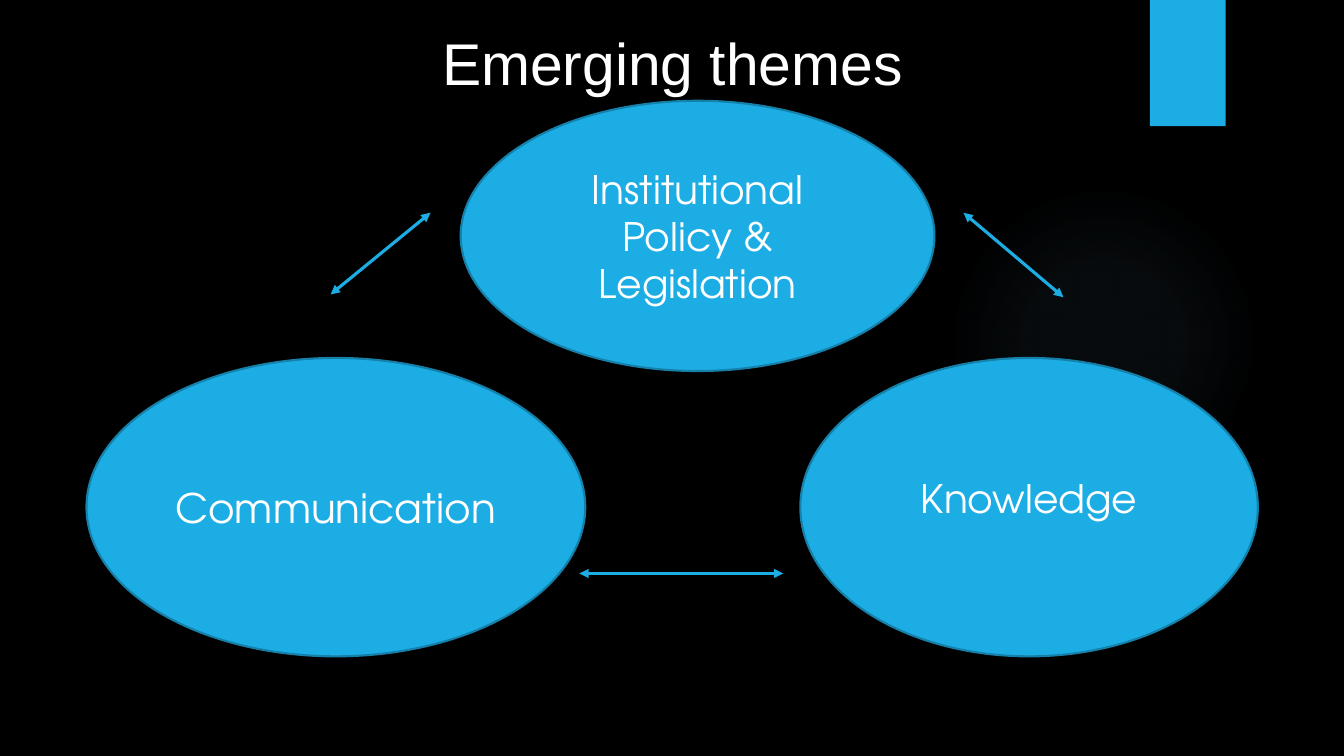
from lxml.etree import SubElement
from pptx import Presentation
from pptx.dml.color import RGBColor
from pptx.enum.shapes import MSO_CONNECTOR, MSO_SHAPE
from pptx.enum.text import MSO_ANCHOR, MSO_AUTO_SIZE, PP_ALIGN
from pptx.oxml import parse_xml
from pptx.oxml.ns import nsdecls, qn
from pptx.util import Cm, Pt

COLORS = {
    "background": "000000",
    "text": "FFFFFF",
    "accent": "1CADE4",
    "outline": "1580A9",
    "glow": "70A1C0",
}


def color(name):
    return RGBColor.from_string(COLORS[name])


class ThemeSlide:
    title_font = "Arial"
    theme_font = "TeX Gyre Adventor"

    def __init__(self, deck):
        self.page = deck.slides.add_slide(deck.slide_layouts[5])
        self.page.background.fill.solid()
        self.page.background.fill.fore_color.rgb = color("background")

    def format_text(self, frame, text, font, size):
        frame.text = text
        frame.word_wrap = True
        para = frame.paragraphs[0]
        para.alignment = PP_ALIGN.CENTER
        span = para.runs[0]
        span.font.name = font
        span.font.size = Pt(size)
        span.font.color.rgb = color("text")

    def title(self, text, left, top, width, height):
        box = self.page.shapes.title
        box.left, box.top = Cm(left), Cm(top)
        box.width, box.height = Cm(width), Cm(height)
        frame = box.text_frame
        self.format_text(frame, text, self.title_font, 42)
        frame.auto_size = MSO_AUTO_SIZE.NONE
        frame.vertical_anchor = MSO_ANCHOR.TOP
        frame.margin_top, frame.margin_bottom = Cm(0.3), Cm(0)

    def shape(self, kind, left, top, width, height):
        shape = self.page.shapes.add_shape(kind, Cm(left), Cm(top), Cm(width), Cm(height))
        shape.shadow.inherit = False
        shape.fill.solid()
        shape.fill.fore_color.rgb = color("accent")
        shape.line.fill.background()
        return shape

    def glow(self, left, top, size):
        shape = self.shape(MSO_SHAPE.OVAL, left, top, size, size)
        stops = "".join(
            f'<a:gs pos="{place * 1000}"><a:srgbClr val="{COLORS["glow"]}">'
            f'<a:alpha val="{alpha * 1000}"/></a:srgbClr></a:gs>'
            for place, alpha in ((0, 7), (36, 6), (69, 0), (100, 0))
        )
        gradient = parse_xml(
            f'<a:gradFill {nsdecls("a")}><a:gsLst>{stops}</a:gsLst><a:path path="circle">'
            '<a:fillToRect l="50000" t="50000" r="50000" b="50000"/></a:path></a:gradFill>'
        )
        properties = shape.element.spPr
        properties.replace(properties.find(qn("a:solidFill")), gradient)

    def theme(self, text, left, top, width, height, size=28, lift=0):
        oval = self.shape(MSO_SHAPE.OVAL, left, top, width, height)
        oval.line.color.rgb = color("outline")
        oval.line.width = Pt(1.5)
        frame = oval.text_frame
        self.format_text(frame, text, self.theme_font, size)
        frame.vertical_anchor = MSO_ANCHOR.MIDDLE
        frame.margin_bottom = Cm(0.13 + 2 * lift)

    def arrow(self, *ends):
        arrow = self.page.shapes.add_connector(MSO_CONNECTOR.STRAIGHT, *map(Cm, ends))
        arrow.line.color.rgb = color("accent")
        arrow.line.width = Pt(2.25)
        line = arrow.line._get_or_add_ln()
        for end in ("a:headEnd", "a:tailEnd"):
            SubElement(line, qn(end), type="triangle")
        SubElement(arrow.element.spPr, qn("a:effectLst"))


def main():
    deck = Presentation()
    deck.slide_width, deck.slide_height = Cm(33.87), Cm(19.05)
    slide = ThemeSlide(deck)
    slide.glow(23.9, 4.65, 7.82)
    slide.shape(MSO_SHAPE.RECTANGLE, 28.98, 0, 1.91, 3.18)
    slide.title("Emerging themes", 2.34, 0.36, 29.21, 1.85)
    slide.theme("Institutional Policy & Legislation", 11.61, 2.54, 11.94, 6.81)
    slide.theme("Communication", 2.18, 9.02, 12.57, 7.52, size=29)
    slide.theme("Knowledge", 20.17, 9.02, 11.53, 7.52, lift=0.23)
    slide.arrow(10.85, 5.36, 8.33, 7.42)
    slide.arrow(24.28, 5.36, 26.8, 7.49)
    slide.arrow(19.74, 14.45, 14.6, 14.45)
    deck.save("out.pptx")


if __name__ == "__main__":
    main()
